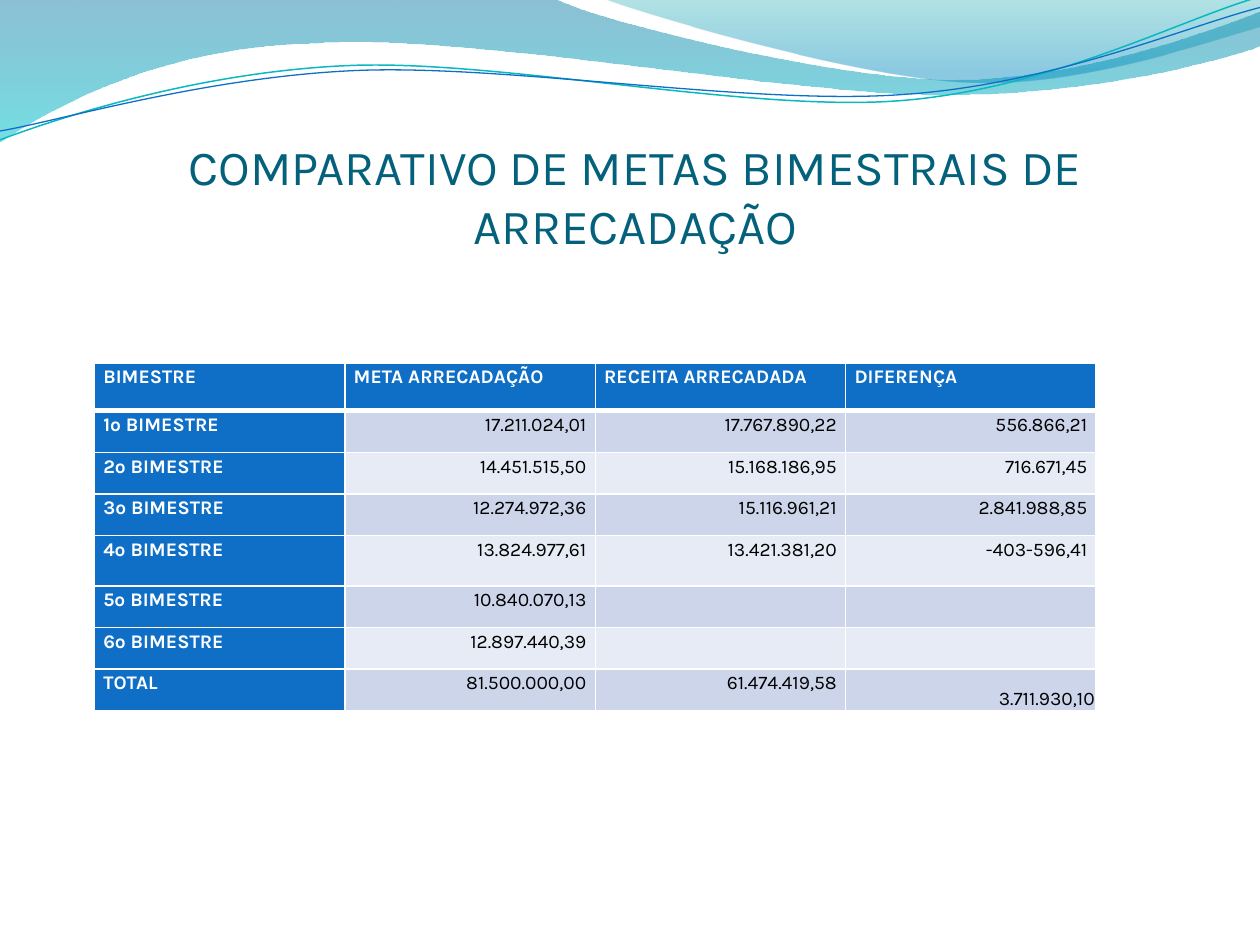
import dataclasses
import math
import typing

import lxml.etree
import pptx
import pptx.dml.color
import pptx.enum.text
import pptx.oxml.ns
import pptx.util

Point = tuple[float, float]
ALIGN = pptx.enum.text.PP_ALIGN
ANCHOR = pptx.enum.text.MSO_ANCHOR
qn = pptx.oxml.ns.qn

# The slide is a grid of square modules
GRID_COLUMNS, GRID_ROWS = 10, 7.5
MODULE = pptx.util.Inches(1)


@dataclasses.dataclass(frozen=True)
class Theme:
    font: str = "Karla"
    title: str = "04617B"
    accent: str = "0F6FC6"
    teal: str = "0AB8BF"
    white: str = "FFFFFF"
    black: str = "000000"
    bands: tuple[str, str] = ("CCD5EA", "E7EBF5")
    title_size: float = 28
    table_size: float = 11
    border: float = 1
    header_border: float = 3


class Stop(typing.NamedTuple):
    position: float
    color: str
    opacity: int  # percent


@dataclasses.dataclass(frozen=True)
class Wave:
    """A start point, then line segments (1 point) or Bezier curves (3 points)."""
    start: Point
    segments: list[tuple[Point, ...]]
    stops: tuple[Stop, ...] = ()
    line_color: str = ""
    line_width: float = 0
    center: Point = (0, 0)
    rotation: float = 0  # degrees about the center


THEME = Theme()

WAVES = [
    Wave((0, 0), [
        ((4.4, -0.01),),
        ((4.76, 0.17), (6.64, 0.63), (7.58, 0.63)),
        ((8.53, 0.63), (9.58, 0.26), (10, 0.09)),
        ((10.01, 0.36),),
        ((9.83, 0.44), (8.7, 0.76), (7.46, 0.75)),
        ((6.22, 0.75), (3.82, 0.28), (2.57, 0.34)),
        ((1.29, 0.36), (0.46, 0.83), (-0.01, 1.13)),
        ((0, 0),),
    ], stops=(Stop(0, "0074A1", 45), Stop(1, "00C6CF", 55))),
    Wave((4.79, -0.01), [
        ((5.09, 0.11), (6.82, 0.62), (7.69, 0.65)),
        ((8.56, 0.69), (9.61, 0.32), (10, 0.21)),
        ((10, 0),),
        ((4.79, -0.01),),
    ], stops=(Stop(0, "00A1A9", 30), Stop(0.8, "008BBF", 45))),
    Wave((0, 1.11), [
        ((0.48, 0.93), (1.58, 0.57), (2.77, 0.52)),
        ((3.95, 0.47), (5.93, 0.89), (7.13, 0.8)),
        ((8.33, 0.71), (9.38, 0.15), (9.98, -0.02)),
    ], line_color=THEME.teal, line_width=0.85, center=(4.99, 0.57), rotation=-2.7),
    Wave((0, 1.04), [
        ((0.47, 0.96), (1.64, 0.61), (2.83, 0.56)),
        ((4.03, 0.51), (5.97, 0.84), (7.17, 0.75)),
        ((8.36, 0.67), (9.41, 0.21), (10, 0.06)),
    ], line_color=THEME.accent, line_width=0.75, center=(5, 0.59), rotation=-2.7),
]

TABLE_ROWS = [
    ("BIMESTRE", "META ARRECADAÇÃO", "RECEITA ARRECADADA", "DIFERENÇA"),
    ("1º BIMESTRE", "17.211.024,01", "17.767.890,22", "556.866,21"),
    ("2º BIMESTRE", "14.451.515,50", "15.168.186,95", "716.671,45"),
    ("3º BIMESTRE", "12.274.972,36", "15.116.961,21", "2.841.988,85"),
    ("4º BIMESTRE", "13.824.977,61", "13.421.381,20", "-403-596,41"),
    ("5º BIMESTRE", "10.840.070,13", "", ""),
    ("6º BIMESTRE", "12.897.440,39", "", ""),
    ("TOTAL", "81.500.000,00", "61.474.419,58", "3.711.930,10"),
]
ROW_HEIGHT = 0.33
SPECIAL_HEIGHTS = {0: 0.38, 4: 0.4}


def modules(count: float) -> int:
    return round(count * MODULE)


def rgb(color: str) -> pptx.dml.color.RGBColor:
    return pptx.dml.color.RGBColor.from_string(color)


def set_attributes(target: typing.Any, values: dict[str, typing.Any]) -> None:
    for name, value in values.items():
        setattr(target, name, value)


def format_run(run: typing.Any, size: float, color: str, bold: bool) -> None:
    set_attributes(run.font, {"name": THEME.font, "size": pptx.util.Pt(size), "bold": bold})
    run.font.color.rgb = rgb(color)


def unrotated(wave: Wave, point: Point) -> Point:
    """The point in the wave's own frame, before its rotation, in slide units."""
    angle = math.radians(-wave.rotation)
    x, y = point[0] - wave.center[0], point[1] - wave.center[1]
    return (modules(wave.center[0] + x * math.cos(angle) - y * math.sin(angle)),
            modules(wave.center[1] + x * math.sin(angle) + y * math.cos(angle)))


def bend_segments(shape: typing.Any, wave: Wave) -> None:
    """Join each three line points of a curved segment into one Bezier curve."""
    lines = iter(list(shape.element.iter(qn("a:lnTo"))))
    for segment in wave.segments:
        first, *others = [next(lines) for _ in segment]
        if others:
            first.tag = qn("a:cubicBezTo")
            for line in others:
                first.append(line[0])
                line.getparent().remove(line)


def draw_wave(slide: typing.Any, wave: Wave) -> None:
    points = [unrotated(wave, point) for segment in wave.segments for point in segment]
    builder = slide.shapes.build_freeform(*unrotated(wave, wave.start))
    builder.add_line_segments(points, close=bool(wave.stops))
    shape = builder.convert_to_shape()
    bend_segments(shape, wave)
    shape.rotation = wave.rotation
    shape.shadow.inherit = False
    if not wave.stops:
        shape.fill.background()
        shape.line.color.rgb = rgb(wave.line_color)
        shape.line.width = pptx.util.Pt(wave.line_width)
        return
    shape.line.fill.background()
    shape.fill.gradient()
    shape.fill.gradient_angle = 270  # counter-clockwise: top to bottom
    for gradient_stop, stop in zip(shape.fill.gradient_stops, wave.stops):
        gradient_stop.position = stop.position
        gradient_stop.color.rgb = rgb(stop.color)
    for element, stop in zip(shape.element.iter(qn("a:srgbClr")), wave.stops):
        lxml.etree.SubElement(element, qn("a:alpha"), val=str(stop.opacity * 1000))


def draw_borders(cell: typing.Any, row: int) -> None:
    properties = cell._tc.get_or_add_tcPr()
    thick_side = {0: "lnB", 1: "lnT"}.get(row)
    for index, side in enumerate(("lnL", "lnR", "lnT", "lnB")):
        width = THEME.header_border if side == thick_side else THEME.border
        line = lxml.etree.Element(qn(f"a:{side}"), w=str(pptx.util.Pt(width)))
        fill = lxml.etree.SubElement(line, qn("a:solidFill"))
        lxml.etree.SubElement(fill, qn("a:srgbClr"), val=THEME.white)
        properties.insert(index, line)


def draw_cell(cell: typing.Any, text: str, row: int, column: int) -> None:
    heading = row == 0 or column == 0
    corner_total = row == len(TABLE_ROWS) - 1 and column == len(TABLE_ROWS[0]) - 1
    side = modules(0.01 if corner_total else 0.07)
    set_attributes(cell, {
        "margin_left": side, "margin_right": side, "margin_top": 0, "margin_bottom": 0,
        "vertical_anchor": ANCHOR.BOTTOM if corner_total else ANCHOR.TOP})
    cell.fill.solid()
    cell.fill.fore_color.rgb = rgb(THEME.accent if heading else THEME.bands[(row - 1) % 2])
    draw_borders(cell, row)
    if text:
        paragraph = cell.text_frame.paragraphs[0]
        set_attributes(paragraph, {
            "alignment": ALIGN.LEFT if heading else ALIGN.RIGHT, "line_spacing": 1.15})
        run = paragraph.add_run()
        run.text = text
        format_run(run, THEME.table_size, THEME.white if heading else THEME.black, heading)


def draw_table(slide: typing.Any) -> None:
    heights = [SPECIAL_HEIGHTS.get(row, ROW_HEIGHT) for row in range(len(TABLE_ROWS))]
    table = slide.shapes.add_table(
        len(TABLE_ROWS), len(TABLE_ROWS[0]), modules(0.75), modules(2.88),
        modules(7.95), modules(sum(heights))).table
    for row, texts in enumerate(TABLE_ROWS):
        table.rows[row].height = modules(heights[row])
        for column, text in enumerate(texts):
            draw_cell(table.cell(row, column), text, row, column)


def draw_title(slide: typing.Any) -> None:
    title = slide.shapes.title
    title.element.getparent().append(title.element)  # in front of the waves
    set_attributes(title, {"left": modules(0.5), "top": modules(0.77),
                           "width": modules(9.08), "height": modules(1.25)})
    set_attributes(title.text_frame, {
        "margin_left": 0, "margin_right": 0, "margin_top": modules(0.05),
        "margin_bottom": 0, "word_wrap": True, "vertical_anchor": ANCHOR.BOTTOM,
        "auto_size": pptx.enum.text.MSO_AUTO_SIZE.NONE})
    paragraph = title.text_frame.paragraphs[0]
    paragraph.alignment = ALIGN.CENTER
    run = paragraph.add_run()
    run.text = "COMPARATIVO DE METAS BIMESTRAIS DE ARRECADAÇÃO"
    format_run(run, THEME.title_size, THEME.title, False)


def main() -> None:
    presentation = pptx.Presentation()
    set_attributes(presentation, {"slide_width": modules(GRID_COLUMNS),
                                  "slide_height": modules(GRID_ROWS)})
    slide = presentation.slides.add_slide(presentation.slide_layouts[5])
    for wave in WAVES:
        draw_wave(slide, wave)
    draw_title(slide)
    draw_table(slide)
    presentation.save("out.pptx")


if __name__ == "__main__":
    main()
